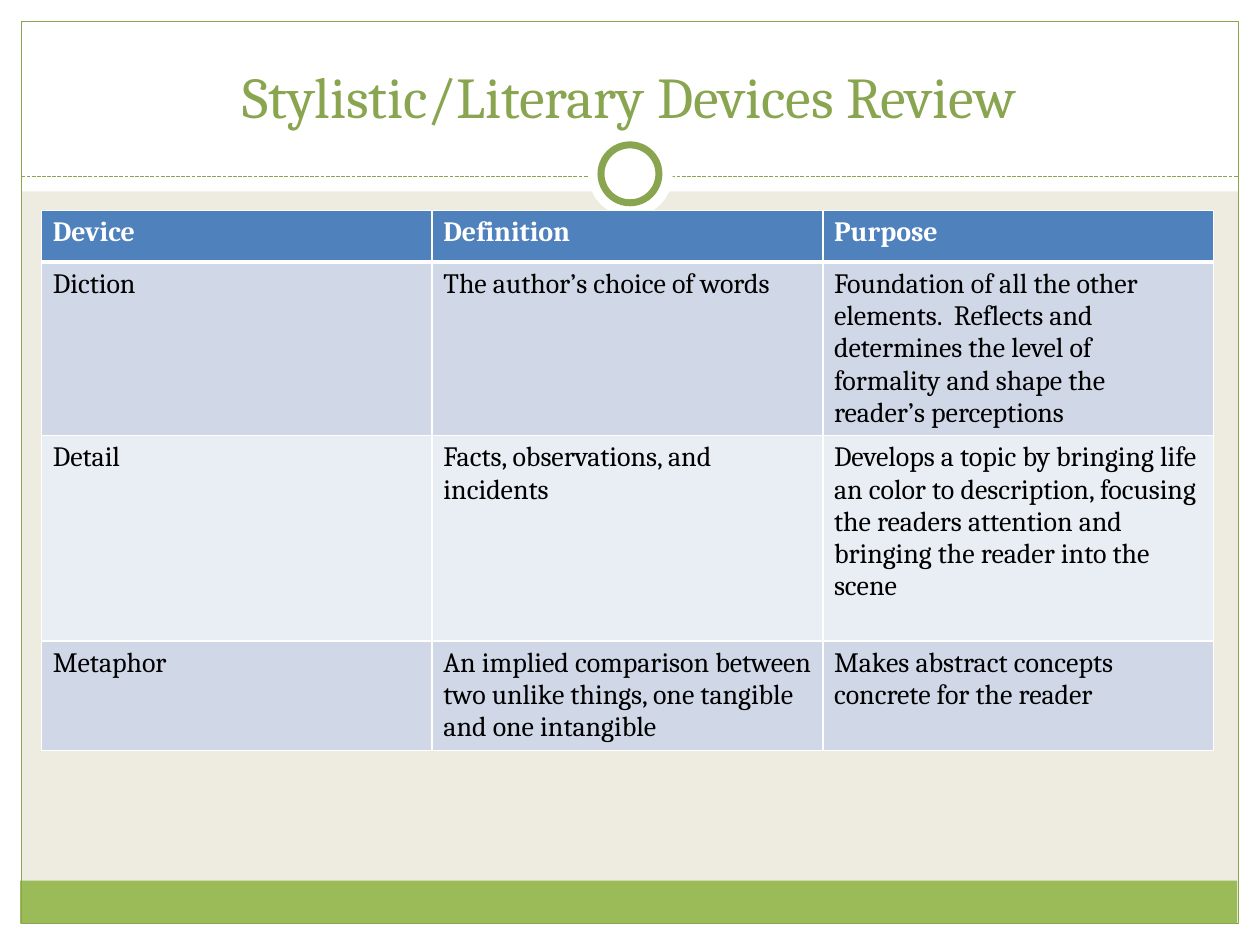
"""Build a slide that reviews literary devices in a three-column table."""
from pptx import Presentation
from pptx.dml.color import RGBColor
from pptx.enum.dml import MSO_LINE
from pptx.enum.shapes import MSO_CONNECTOR, MSO_SHAPE as SHAPE
from pptx.enum.text import MSO_ANCHOR, PP_ALIGN
from pptx.oxml import parse_xml
from pptx.oxml.ns import nsdecls
from pptx.util import Inches, Pt

COLORS = {
    "background": "EEECE1", "white": "FFFFFF", "black": "000000",
    "green": "9BBB59", "dark_green": "89A54F",
    "header": "4F81BD", "odd_row": "D0D8E8", "even_row": "E9EDF4",
}
FONT = "Cambria"


def write(tf, text, size=16, color="black", bold=False, align=PP_ALIGN.LEFT):
    p = tf.paragraphs[0]
    p.alignment = align
    r = p.add_run()
    r.text = text
    r.font.name = FONT
    r.font.size = Pt(size)
    r.font.bold = bold
    r.font.color.rgb = RGBColor.from_string(COLORS[color])


def add_panel(shapes, kind, box, fill=None, line=None, width=0.75):
    sp = shapes.add_shape(kind, *[Inches(v) for v in box])
    sp.shadow.inherit = False
    if fill:
        sp.fill.solid()
        sp.fill.fore_color.rgb = RGBColor.from_string(COLORS[fill])
    else:
        sp.fill.background()
    if line:
        sp.line.color.rgb = RGBColor.from_string(COLORS[line])
        sp.line.width = Pt(width)
    else:
        sp.line.fill.background()


prs = Presentation()
prs.slide_width, prs.slide_height = Inches(10), Inches(7.5)
s = prs.slides.add_slide(prs.slide_layouts[5])
s.background.fill.solid()
s.background.fill.fore_color.rgb = RGBColor.from_string(COLORS["background"])

margins = [(0, 7.33, 10, 0.17), (0, 0, 10, 1.52), (0, 0, 0.17, 7.5), (9.83, 0, 0.17, 7.5)]
for box in margins:
    add_panel(s.shapes, SHAPE.RECTANGLE, box, fill="white")
add_panel(s.shapes, SHAPE.RECTANGLE, (0.16, 6.99, 9.66, 0.34), fill="green")
add_panel(s.shapes, SHAPE.RECTANGLE, (0.17, 0.17, 9.66, 7.16), line="dark_green")

divider = s.shapes.add_connector(
    MSO_CONNECTOR.STRAIGHT, Inches(0.17), Inches(1.4), Inches(9.83), Inches(1.4))
divider.line.color.rgb = RGBColor.from_string(COLORS["dark_green"])
divider.line.width = Pt(0.75)
divider.line.dash_style = MSO_LINE.SQUARE_DOT
divider._element.spPr.append(parse_xml(f"<a:effectLst {nsdecls('a')}/>"))

add_panel(s.shapes, SHAPE.OVAL, (4.67, 1.05, 0.67, 0.67), fill="white")
add_panel(s.shapes, SHAPE.OVAL, (4.77, 1.15, 0.46, 0.46), fill="white", line="dark_green", width=4)

title = s.shapes.title
title.left, title.top = Inches(0.33), Inches(0.25)
title.width, title.height = Inches(9.33), Inches(0.83)
title.text_frame.vertical_anchor = MSO_ANCHOR.BOTTOM
write(title.text_frame, "Stylistic/Literary Devices Review", size=33,
      color="dark_green", align=PP_ALIGN.CENTER)
s.shapes._spTree.append(title._element)

rows = [
    ("Device", "Definition", "Purpose"),
    ("Diction", "The author’s choice of words",
     "Foundation of all the other elements.  Reflects and determines the level of "
     "formality and shape the reader’s perceptions"),
    ("Detail", "Facts, observations, and incidents",
     "Develops a topic by bringing life an color to description, focusing the readers "
     "attention and bringing the reader into the scene"),
    ("Metaphor", "An implied comparison between two unlike things, one tangible and one intangible",
     "Makes abstract concepts concrete for the reader"),
]
row_heights = [0.41, 1.37, 1.63, 0.87]
row_fills = ["header", "odd_row", "even_row", "odd_row"]

table = s.shapes.add_table(
    len(rows), 3, Inches(0.33), Inches(1.67), Inches(9.3), Inches(sum(row_heights))).table
for column in table.columns:
    column.width = Inches(3.1)
for i, texts in enumerate(rows):
    table.rows[i].height = Inches(row_heights[i])
    is_header = i == 0
    for j, text in enumerate(texts):
        cell = table.cell(i, j)
        cell.margin_left = cell.margin_right = Inches(0.09)
        cell.margin_top = cell.margin_bottom = Inches(0.05)
        write(cell.text_frame, text, color="white" if is_header else "black", bold=is_header)
        tc_pr = cell._tc.get_or_add_tcPr()
        for side in ("L", "R", "T", "B"):
            thick = (is_header and side == "B") or (i == 1 and side == "T")
            tc_pr.append(parse_xml(
                f'<a:ln{side} {nsdecls("a")} w="{Pt(3 if thick else 1)}"><a:solidFill>'
                f'<a:srgbClr val="{COLORS["white"]}"/></a:solidFill></a:ln{side}>'))
        cell.fill.solid()
        cell.fill.fore_color.rgb = RGBColor.from_string(COLORS[row_fills[i]])

prs.save("out.pptx")
